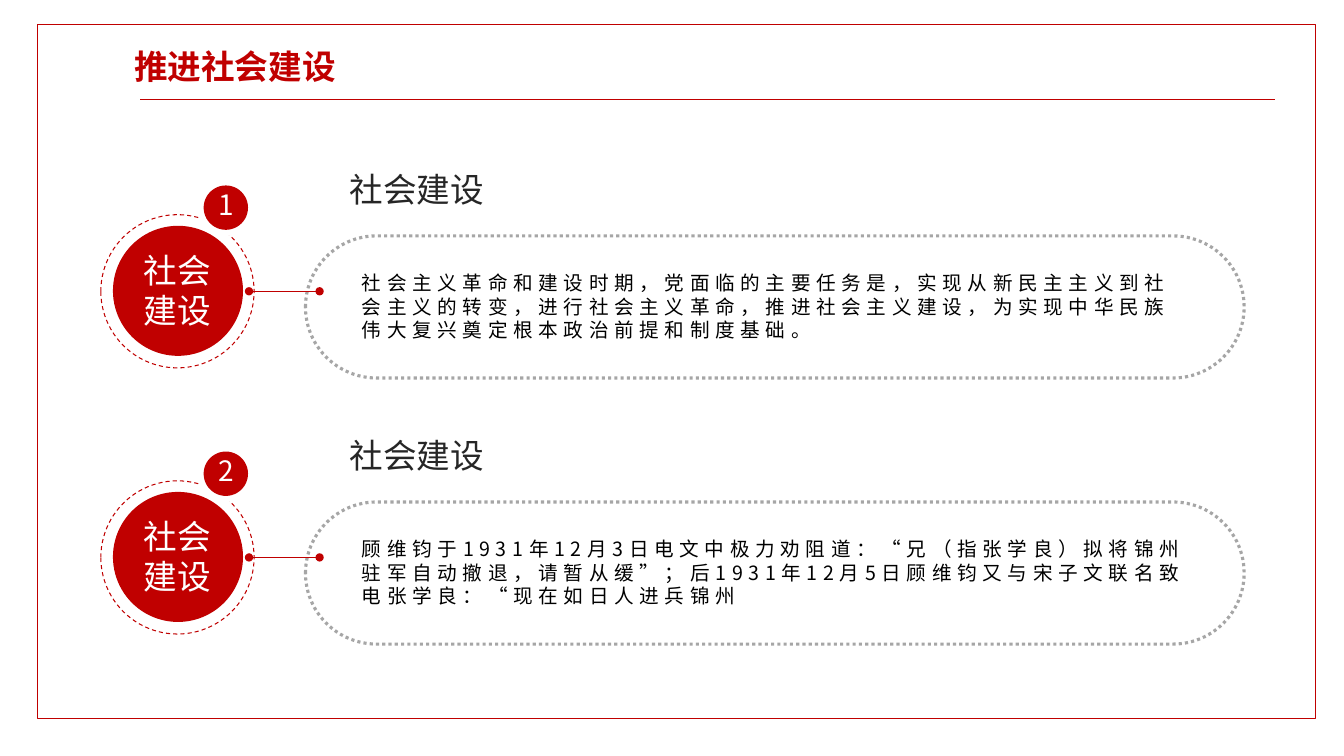
from lxml import etree
from pptx import Presentation
from pptx import util as u
from pptx.dml.color import RGBColor
from pptx.enum import dml, shapes, text
from pptx.oxml.ns import qn

PX = 9144
FONT = "Noto Sans CJK SC"
COLORS = {"red": "C00000", "white": "FFFFFF", "grey": "A6A6A6", "dark": "262626", "black": "000000"}
KIND = shapes.MSO_SHAPE
ALIGN = text.PP_ALIGN


def draw(parent, kind, box, fill=None, line=None, width=1, dash=None, adjust=None):
    shape = parent.add_shape(kind, *[n * PX for n in box])
    shape.shadow.inherit = False
    if fill:
        shape.fill.solid()
        shape.fill.fore_color.rgb = RGBColor.from_string(COLORS[fill])
    else:
        shape.fill.background()
    if line:
        shape.line.color.rgb = RGBColor.from_string(COLORS[line])
        shape.line.width = u.Pt(width)
        shape.line.dash_style = dash
    else:
        shape.line.fill.background()
    if adjust is not None:
        shape.adjustments[0] = adjust
    return shape


def write(holder, words, size, color, align=ALIGN.LEFT, inset=(10, 5), bold=False, spacing=0):
    frame = holder.text_frame
    frame.word_wrap = True
    frame.auto_size = text.MSO_AUTO_SIZE.NONE
    frame.vertical_anchor = text.MSO_ANCHOR.TOP
    frame.margin_left = frame.margin_right = inset[0] * PX
    frame.margin_top = frame.margin_bottom = inset[1] * PX
    frame.text = words
    paragraph = frame.paragraphs[0]
    paragraph.alignment = align
    font = paragraph.runs[0].font
    font.size = u.Pt(size)
    font.bold = bold
    font.name = FONT
    font.color.rgb = RGBColor.from_string(COLORS[color])
    properties = paragraph.runs[0]._r.get_or_add_rPr()
    etree.SubElement(properties, qn("a:ea"), typeface=FONT)
    if spacing:
        properties.set("spc", str(spacing * 100))


deck = Presentation()
deck.slide_width, deck.slide_height = 1333 * PX, 750 * PX
slide = deck.slides.add_slide(deck.slide_layouts[5])

heading = slide.shapes.title
heading.left, heading.top, heading.width, heading.height = [n * PX for n in (123, 41, 252, 50)]
write(heading, "推进社会建设", 24, "red", ALIGN.JUSTIFY, bold=True)

border = draw(slide.shapes, KIND.RECTANGLE, (37, 24, 1268, 689), "white", "red")
heading._element.addprevious(border._element)

straight = shapes.MSO_CONNECTOR.STRAIGHT
rule = slide.shapes.add_connector(straight, 139 * PX, 99 * PX, 1265 * PX, 99 * PX)
rule.line.width = u.Pt(0.5)
connectors = [rule]

topics = [
    "社会主义革命和建设时期，党面临的主要任务是，实现从新民主主义到社会主义的转变，进行社会主义革命，推进社会主义建设，为实现中华民族伟大复兴奠定根本政治前提和制度基础。",
    "顾维钧于1931年12月3日电文中极力劝阻道：“兄（指张学良）拟将锦州驻军自动撤退，请暂从缓”；后1931年12月5日顾维钧又与宋子文联名致电张学良：“现在如日人进兵锦州",
]
for index, story in enumerate(topics):
    top = 163 + 264 * index
    topic = slide.shapes.add_group_shape().shapes
    draw(topic, KIND.DONUT, (112, top + 61, 129, 129), "red", adjust=0.049)
    draw(topic, KIND.OVAL, (114, top + 64, 124, 124), "red")
    badge = topic.add_textbox(124 * PX, (top + 78) * PX, 104 * PX, 94 * PX)
    write(badge, "社会建设", 24, "white", ALIGN.CENTER, (13, 7))
    draw(topic, KIND.OVAL, (100, top + 50, 152, 152), line="red", width=0.75, dash=dml.MSO_LINE.DASH)
    draw(topic, KIND.OVAL, (196, top + 14, 57, 57), "white")
    draw(topic, KIND.OVAL, (202, top + 21, 44, 44), "red")
    number = topic.add_textbox(207 * PX, (top + 18) * PX, 54 * PX, 44 * PX)
    write(number, str(index + 1), 20, "white")
    draw(topic, KIND.ROUNDED_RECTANGLE, (303, top + 71, 931, 141), line="grey", width=2.25,
         dash=dml.MSO_LINE.ROUND_DOT, adjust=0.5)
    link = topic.add_connector(straight, 317 * PX, (top + 126) * PX, 247 * PX, (top + 126) * PX)
    link.line.width = u.Pt(1)
    for end in ("a:headEnd", "a:tailEnd"):
        etree.SubElement(link.get_or_add_ln(), qn(end), type="oval")
    connectors.append(link)
    subheading = topic.add_textbox(337 * PX, top * PX, 188 * PX, 50 * PX)
    write(subheading, "社会建设", 24, "dark", ALIGN.JUSTIFY)
    body = topic.add_textbox(347 * PX, (top + 100) * PX, 848 * PX, 82 * PX)
    write(body, story, 14, "black", inset=(12, 6), spacing=4)

for connector in connectors:
    connector.line.color.rgb = RGBColor.from_string(COLORS["red"])
    etree.SubElement(connector._element.spPr, qn("a:effectLst"))

deck.save("out.pptx")
